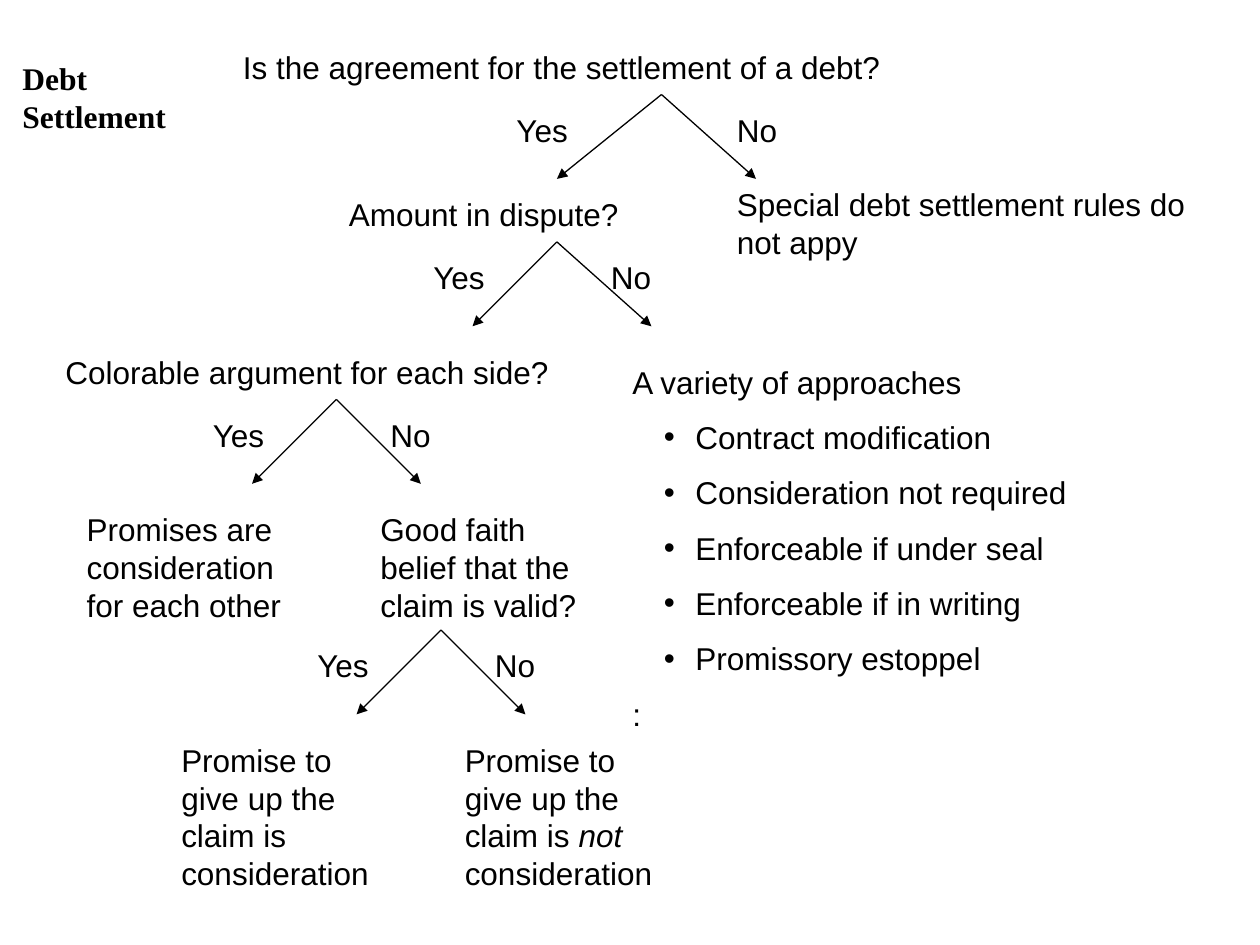
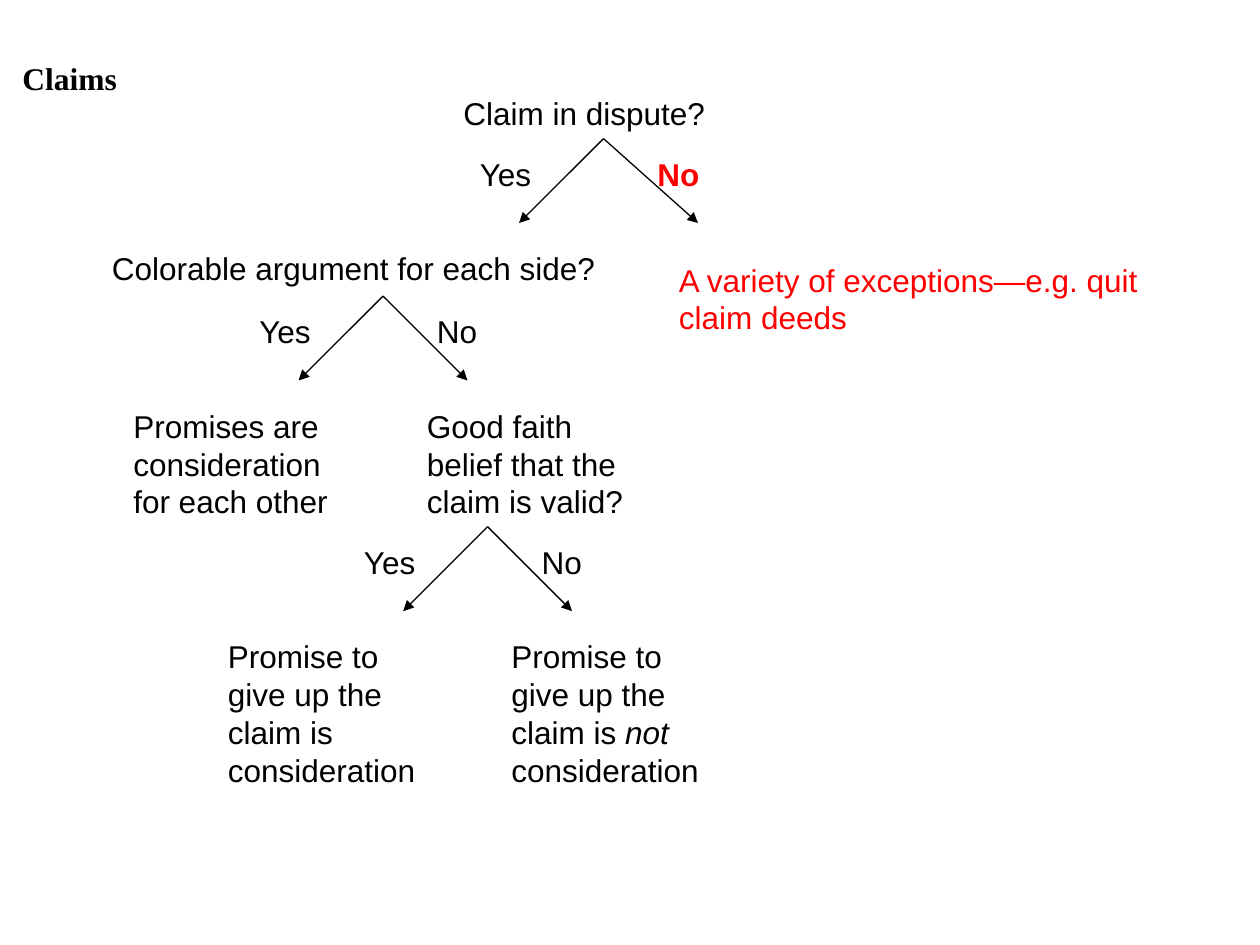
from dataclasses import dataclass

from lxml.etree import SubElement
from pptx import Presentation
from pptx.dml.color import RGBColor
from pptx.enum.shapes import MSO_CONNECTOR as Connector
from pptx.enum.text import MSO_AUTO_SIZE as AutoSize
from pptx.oxml.ns import qn
from pptx.util import Inches, Pt


@dataclass(frozen=True)
class Theme:
    """Colours, fonts, type sizes and line widths of the slides."""

    ink: RGBColor = RGBColor(0, 0, 0)
    accent: RGBColor = RGBColor(255, 0, 0)
    body_font: str = "Arial"
    title_font: str = "Times New Roman"
    size: Pt = Pt(18)
    paragraph_gap: Pt = Pt(10)
    line: Pt = Pt(0.75)


THEME = Theme()
LINE_HEIGHT = 0.3
DROP = 0.67


def style_run(run, color=THEME.ink, font=THEME.body_font, bold=False, italic=False):
    """Give a run its typeface, size, colour and emphasis."""
    run.font.name = font
    run.font.size = THEME.size
    run.font.color.rgb = color
    run.font.bold = bold
    run.font.italic = italic


def add_text(slide, left, top, width, text, lines=1, gap=THEME.paragraph_gap, **style):
    """Add a wrapping text box sized for its lines and return its text frame."""
    height = 0.1 + LINE_HEIGHT * lines
    box = slide.shapes.add_textbox(Inches(left), Inches(top), Inches(width), Inches(height))
    text_frame = box.text_frame
    text_frame.word_wrap = True
    text_frame.auto_size = AutoSize.SHAPE_TO_FIT_TEXT
    text_frame.text = text
    for index, paragraph in enumerate(text_frame.paragraphs):
        if index:
            paragraph.space_before = gap
        for run in paragraph.runs:
            style_run(run, **style)
    return text_frame


def add_title(slide, text):
    """Add the bold serif heading in the top left corner."""
    lines = len(text.splitlines())
    add_text(slide, 0.08, 0.42, 1.42, text, lines, Pt(0), font=THEME.title_font, bold=True)


def add_arrow(slide, left, top, reach):
    """Draw an arrow that falls by one level and moves sideways by reach."""
    arrow = slide.shapes.add_connector(
        Connector.STRAIGHT, Inches(left), Inches(top), Inches(left + reach), Inches(top + DROP)
    )
    arrow.line.color.rgb = THEME.ink
    arrow.line.width = THEME.line
    SubElement(arrow.line._get_or_add_ln(), qn("a:tailEnd"), type="triangle")
    SubElement(arrow._element.spPr, qn("a:effectLst"))


def add_branch(slide, left, top, yes_reach=DROP, no_reach=DROP,
               yes_label=-1.08, no_label=0.33, **no_style):
    """Draw a Yes and a No arrow with their labels below one apex."""
    add_arrow(slide, left, top, -yes_reach)
    add_arrow(slide, left, top, no_reach)
    add_text(slide, left + yes_label, top + 0.08, 0.75, "Yes")
    add_text(slide, left + no_label, top + 0.08, 1.33, "No", **no_style)


def add_argument_tree(slide, left, top):
    """Add the colorable argument question and everything that follows from it."""
    add_text(slide, left, top, 4.25, "Colorable argument for each side?")
    add_branch(slide, left + 2.25, top + 0.42)
    add_text(slide, left + 0.17, top + 1.25, 1.83,
             "Promises are consideration for each other", lines=3)
    add_text(slide, left + 2.5, top + 1.25, 2,
             "Good faith belief that the claim is valid?", lines=3)
    add_branch(slide, left + 3.08, top + 2.25)
    outcome = "Promise to give up the claim is "
    add_text(slide, left + 0.92, top + 3.08, 1.75, outcome + "consideration", lines=4)
    refusal = add_text(slide, left + 3.17, top + 3.08, 1.75, outcome, lines=4)
    for words, italic in (("not", True), (" consideration", False)):
        run = refusal.paragraphs[0].add_run()
        run.text = words
        style_run(run, italic=italic)


def add_approaches(slide, left, top):
    """Add the bulleted approaches to a debt that is not in dispute."""
    approaches = (
        "Contract modification",
        "Consideration not required",
        "Enforceable if under seal",
        "Enforceable if in writing",
        "Promissory estoppel",
    )
    text = "\n".join(("A variety of approaches", *approaches, ":"))
    text_frame = add_text(slide, left, top, 4.08, text, lines=10)
    for paragraph in text_frame.paragraphs[1:-1]:
        paragraph.level = 1
        properties = paragraph._p.get_or_add_pPr()
        properties.set("marL", str(Inches(0.5)))
        properties.set("indent", str(Inches(-0.25)))
        SubElement(properties, qn("a:buFont"), typeface=THEME.body_font)
        SubElement(properties, qn("a:buChar"), char="•")


def build_debt_slide(slide):
    """Lay out the decision tree for debt settlement."""
    add_title(slide, "Debt\nSettlement")
    add_text(slide, 1.83, 0.33, 6, "Is the agreement for the settlement of a debt?")
    add_branch(slide, 5.25, 0.75, yes_reach=0.83, no_reach=0.75, yes_label=-1.25, no_label=0.5)
    add_text(slide, 5.75, 1.42, 4, "Special debt settlement rules do not appy", lines=2)
    add_text(slide, 2.67, 1.5, 2.92, "Amount in dispute?")
    add_branch(slide, 4.42, 1.92, no_reach=0.75)
    add_approaches(slide, 4.92, 2.83)
    add_argument_tree(slide, 0.42, 2.75)


def build_claims_slide(slide):
    """Lay out the decision tree for claims."""
    add_title(slide, "Claims")
    add_text(slide, 3.58, 0.7, 2.92, "Claim in dispute?")
    add_branch(slide, 4.79, 1.1, no_reach=0.75, color=THEME.accent, bold=True)
    add_text(slide, 5.29, 2.02, 4.08, "A variety of exceptions—e.g. quit claim deeds",
             lines=2, color=THEME.accent)
    add_argument_tree(slide, 0.79, 1.93)


def main():
    """Build both slides and save the presentation."""
    presentation = Presentation()
    presentation.slide_width = Inches(10)
    presentation.slide_height = Inches(7.5)
    blank = presentation.slide_layouts[6]
    for build in (build_debt_slide, build_claims_slide):
        build(presentation.slides.add_slide(blank))
    presentation.save("out.pptx")


if __name__ == "__main__":
    main()
